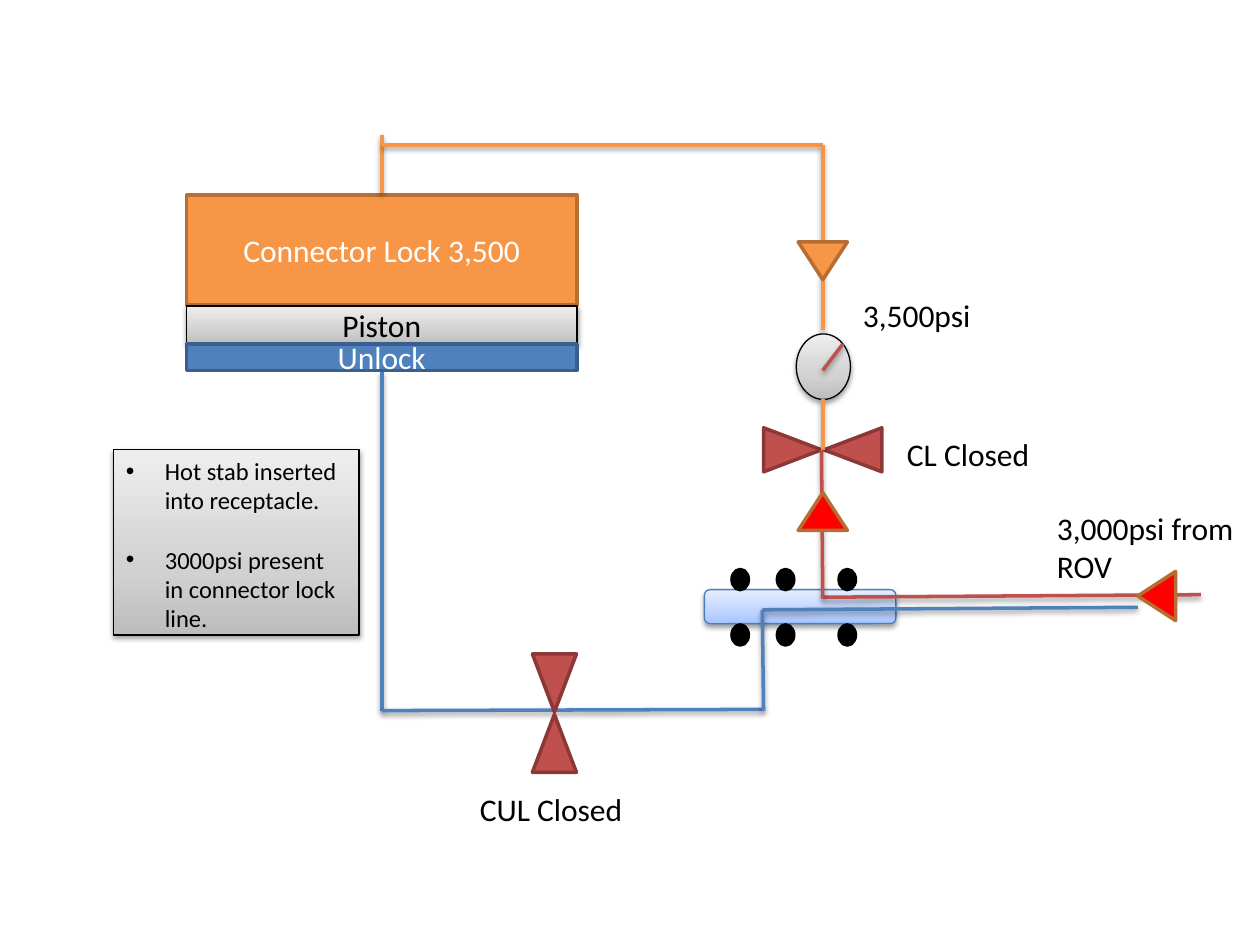
import lxml.etree
import pptx
import pptx.dml.color
import pptx.enum.shapes
import pptx.enum.text
import pptx.oxml
import pptx.oxml.ns
import pptx.util

Inches = pptx.util.Inches
Pt = pptx.util.Pt
SHAPE = pptx.enum.shapes.MSO_SHAPE
ALIGN = pptx.enum.text.PP_ALIGN
ANCHOR = pptx.enum.text.MSO_ANCHOR
qn = pptx.oxml.ns.qn

ORANGE, BLUE, RED, BRIGHT_RED = "F79646", "4F81BD", "C0504D", "FF0000"
BLACK, WHITE, ARROW_EDGE = "000000", "FFFFFF", "B66D31"
GREY_STOPS = ("BDBDBD", "D1D1D1", "EEEEEE")
BLUE_STOPS = ("A4C4FF", "BFD4FF", "E6EEFF")


def rgb(value):
    return pptx.dml.color.RGBColor.from_string(value)


def child(parent, tag, **attributes):
    return lxml.etree.SubElement(parent, qn(tag), {k: str(v) for k, v in attributes.items()})


def add_shadow(effects):
    shadow = child(effects, "a:outerShdw", blurRad=Pt(3.1), dist=Pt(1.6), dir=5400000, rotWithShape=0)
    color = child(shadow, "a:srgbClr", val=BLACK)
    child(color, "a:alpha", val=38000)


def fill_gradient(shape, colors):
    shape.fill.gradient()
    shape.fill.gradient_angle = 90
    stops = shape._element.spPr.find(qn("a:gradFill")).find(qn("a:gsLst"))
    for stop in list(stops):
        stops.remove(stop)
    for position, color in zip((0, 35, 100), colors):
        child(child(stops, "a:gs", pos=position * 1000), "a:srgbClr", val=color)


def add_part(slide, kind, box, fill, edge, weight=2, rotation=0):
    shape = slide.shapes.add_shape(kind, *map(Inches, box))
    shape.rotation = rotation
    shape.line.color.rgb = rgb(edge)
    shape.line.width = Pt(weight)
    shape.shadow.inherit = False
    if isinstance(fill, tuple):
        fill_gradient(shape, fill)
        add_shadow(shape._element.spPr.find(qn("a:effectLst")))
    else:
        shape.fill.solid()
        shape.fill.fore_color.rgb = rgb(fill)
    return shape


def add_pipe(slide, start, end, color):
    pipe = slide.shapes.add_connector(
        pptx.enum.shapes.MSO_CONNECTOR.STRAIGHT, *map(Inches, start + end))
    pipe.line.color.rgb = rgb(color)
    pipe.line.width = Pt(2)
    add_shadow(child(pipe._element.spPr, "a:effectLst"))


def add_run(paragraph, text, color=BLACK, size=18):
    run = paragraph.add_run()
    run.text = text
    run.font.name = "Calibri"
    run.font.size = Pt(size)
    run.font.color.rgb = rgb(color)


def add_label(slide, text, left, top, height=0.4):
    label = slide.shapes.add_textbox(Inches(left), Inches(top), Inches(1.67), Inches(height))
    label.text_frame.word_wrap = True
    add_run(label.text_frame.paragraphs[0], text)


def add_triangle(slide, center, size, fill, edge, rotation):
    (x, y), (width, height) = center, size
    box = (x - width / 2, y - height / 2, width, height)
    add_part(slide, SHAPE.ISOSCELES_TRIANGLE, box, fill, edge, rotation=rotation)


def add_flow_arrow(slide, x, y, fill, rotation):
    add_triangle(slide, (x, y), (0.39, 0.3), fill, ARROW_EDGE, rotation)


def add_valve(slide, x, y, horizontal):
    for side in (-1, 1):
        if horizontal:
            center, rotation = (x + side * 0.24, y), 180 - side * 90 if side < 0 else 270
            rotation = 90 if side < 0 else 270
        else:
            center, rotation = (x, y + side * 0.24), 180 if side < 0 else 0
        add_triangle(slide, center, (0.35, 0.46), RED, "8C3836", rotation)


def add_actuator(slide, left, top, width):
    chambers = (
        ("Connector Lock 3,500", 0, 0.87, ORANGE, "B76F34", 2, WHITE),
        ("Piston", 0.88, 0.3, GREY_STOPS, BLACK, 0.75, BLACK),
        ("Unlock", 1.18, 0.21, BLUE, "3A5F8C", 2, WHITE),
    )
    for text, offset, height, fill, edge, weight, color in chambers:
        chamber = add_part(slide, SHAPE.RECTANGLE, (left, top + offset, width, height),
                           fill, edge, weight)
        chamber.text_frame.vertical_anchor = ANCHOR.MIDDLE
        paragraph = chamber.text_frame.paragraphs[0]
        paragraph.alignment = ALIGN.CENTER
        add_run(paragraph, text, color)


def add_lock_line(slide, left, top, width):
    right = left + width
    add_pipe(slide, (left, top + 0.38), (left, top - 0.08), ORANGE)
    add_pipe(slide, (left, top), (right, top), ORANGE)
    add_pipe(slide, (right, top), (right, top + 1.47), ORANGE)


def add_unlock_line(slide, left, top, width, height):
    right, bottom = left + width, top + height
    add_pipe(slide, (left, top), (left, bottom), BLUE)
    add_pipe(slide, (left, bottom), (right, bottom - 0.01), BLUE)
    add_valve(slide, left + 1.37, bottom + 0.02, horizontal=False)
    add_label(slide, "CUL Closed", left + 0.68, bottom + 0.58)


def add_gauge(slide, left, top, width, height):
    add_part(slide, SHAPE.OVAL, (left, top, width, height), GREY_STOPS, BLACK, 0.75)
    add_pipe(slide, (left + 0.21, top + 0.29), (left + 0.37, top + 0.08), RED)
    add_label(slide, "3,500psi", left + 0.43, top - 0.35)


def add_lock_valve(slide, x, y):
    add_valve(slide, x, y, horizontal=True)
    add_label(slide, "CL Closed", x + 0.57, y - 0.17)
    add_pipe(slide, (x, y - 0.4), (x, y), ORANGE)
    add_pipe(slide, (x - 0.01, y), (x, y + 1.18), RED)


def add_receptacle(slide, left, top, width, height):
    add_part(slide, SHAPE.ROUNDED_RECTANGLE, (left, top, width, height),
             BLUE_STOPS, "4B7EBC", 0.75)
    for row_offset in (-0.16, 0.28):
        for seal_offset in (0.22, 0.58, 1.07):
            add_part(slide, SHAPE.OVAL, (left + seal_offset, top + row_offset, 0.13, 0.16),
                     BLACK, BLACK)
    add_pipe(slide, (left + 3.44, top + 0.14), (left + 0.46, top + 0.16), BLUE)
    add_pipe(slide, (left + 3.94, top + 0.04), (left + 0.94, top + 0.06), RED)
    add_pipe(slide, (left + 0.46, top + 0.16), (left + 0.47, top + 0.96), BLUE)
    add_label(slide, "3,000psi from ROV", left + 2.7, top - 0.69, 0.7)


def add_note(slide, left, top, width, height):
    note = add_part(slide, SHAPE.RECTANGLE, (left, top, width, height), GREY_STOPS, BLACK, 0.75)
    frame = note.text_frame
    frame.word_wrap = True
    frame.vertical_anchor = ANCHOR.TOP
    steps = ("Hot stab inserted into receptacle.", "3000psi present in connector lock line.")
    for index, step in enumerate(steps):
        paragraph = frame.add_paragraph() if index else frame.paragraphs[0]
        paragraph.alignment = ALIGN.LEFT
        paragraph.space_before = Pt(17 * index)
        properties = paragraph._p.get_or_add_pPr()
        properties.set("marL", str(Inches(0.31)))
        properties.set("indent", str(-Inches(0.31)))
        child(properties, "a:buFont", typeface="Arial")
        child(properties, "a:buChar", char="•")
        add_run(paragraph, step, size=14)


def main():
    deck = pptx.Presentation()
    deck.slide_width, deck.slide_height = Inches(10), Inches(7.5)
    slide = deck.slides.add_slide(deck.slide_layouts[6])
    add_actuator(slide, 1.48, 1.55, 3.1)
    add_lock_line(slide, 3.03, 1.15, 3.5)
    add_unlock_line(slide, 3.03, 2.95, 3.03, 2.69)
    add_gauge(slide, 6.32, 2.65, 0.43, 0.52)
    add_receptacle(slide, 5.59, 4.68, 1.52, 0.27)
    add_lock_valve(slide, 6.53, 3.57)
    add_note(slide, 0.9, 3.57, 1.95, 1.47)
    add_flow_arrow(slide, 6.53, 4.06, BRIGHT_RED, 0)
    add_flow_arrow(slide, 9.18, 4.73, BRIGHT_RED, 270)
    add_flow_arrow(slide, 6.53, 2.07, ORANGE, 180)
    deck.save("out.pptx")


if __name__ == "__main__":
    main()
